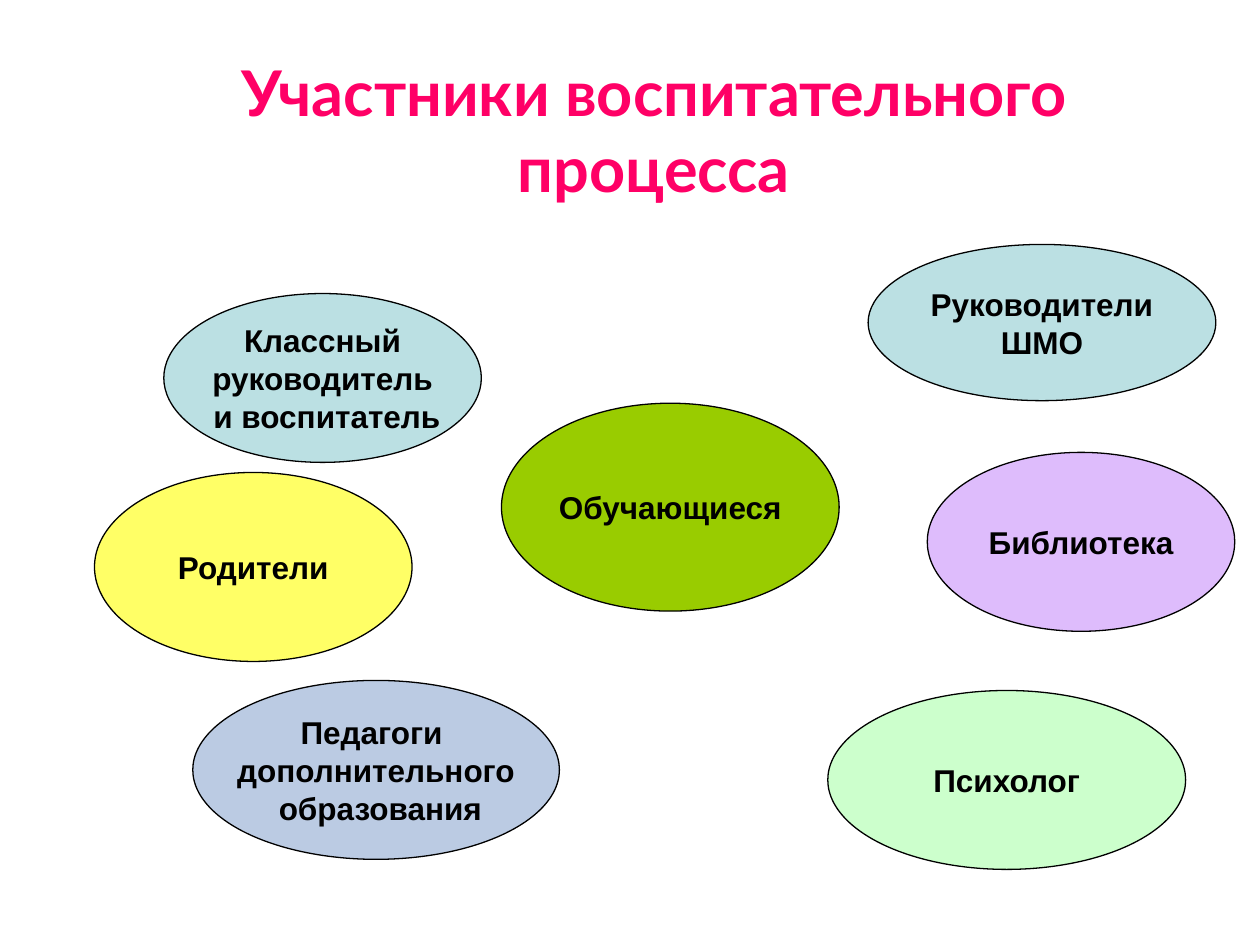
from pptx import Presentation
from pptx.dml.color import RGBColor
from pptx.enum.shapes import MSO_SHAPE
from pptx.enum.text import MSO_ANCHOR, MSO_AUTO_SIZE, PP_ALIGN
from pptx.util import Inches, Pt

OVAL = MSO_SHAPE.OVAL
MIDDLE = MSO_ANCHOR.MIDDLE
FIXED = MSO_AUTO_SIZE.NONE
CENTER = PP_ALIGN.CENTER

COLORS = {
    "pink": "FF0066",
    "black": "000000",
    "aqua": "BBE0E3",
    "green": "99CC00",
    "lilac": "DEBCFC",
    "yellow": "FFFF66",
    "blue": "BBCBE3",
    "mint": "CCFFCC",
}

ROLES = [
    ("Классный\nруководитель\n и воспитатель", "aqua", (1.3, 2.33, 2.52, 1.34)),
    ("Руководители\nШМО", "aqua", (6.89, 1.94, 2.76, 1.24)),
    ("Обучающиеся", "green", (3.98, 3.2, 2.68, 1.65)),
    ("Библиотека", "lilac", (7.36, 3.59, 2.44, 1.42)),
    ("Родители", "yellow", (0.75, 3.75, 2.52, 1.5)),
    ("Педагоги \nдополнительного\n образования", "blue", (1.53, 5.4, 2.91, 1.42)),
    ("Психолог", "mint", (6.57, 5.48, 2.84, 1.42)),
]


class Deck:
    head = {"name": "Lato", "size": Pt(36), "bold": True}
    body = {"name": "Arial", "size": Pt(18), "bold": True}

    def __init__(self, wide, high):
        self.show = Presentation()
        self.show.slide_width = Inches(wide)
        self.show.slide_height = Inches(high)
        self.slide = self.show.slides.add_slide(self.show.slide_layouts[5])

    def color(self, name):
        return RGBColor.from_string(COLORS[name])

    def label(self, shape, text, style, color, wrap):
        frame = shape.text_frame
        frame.text = text
        frame.auto_size = FIXED
        frame.word_wrap = wrap
        frame.vertical_anchor = MIDDLE
        for para in frame.paragraphs:
            para.alignment = CENTER
            for run in para.runs:
                for key, value in style.items():
                    setattr(run.font, key, value)
                run.font.color.rgb = self.color(color)

    def title(self, text, box):
        shape = self.slide.shapes.title
        for key, value in zip(("left", "top", "width", "height"), box):
            setattr(shape, key, Inches(value))
        self.label(shape, text, self.head, "pink", True)

    def oval(self, text, fill, box):
        shape = self.slide.shapes.add_shape(OVAL, *map(Inches, box))
        shape.shadow.inherit = False
        shape.fill.solid()
        shape.fill.fore_color.rgb = self.color(fill)
        shape.line.color.rgb = self.color("black")
        shape.line.width = Pt(0.75)
        self.label(shape, text, self.body, "black", False)


def main():
    deck = Deck(10, 7.5)
    deck.title("Участники воспитательного\vпроцесса", (1.69, 0.36, 7, 1.33))
    for text, fill, box in ROLES:
        deck.oval(text, fill, box)
    deck.show.save("out.pptx")


if __name__ == "__main__":
    main()
